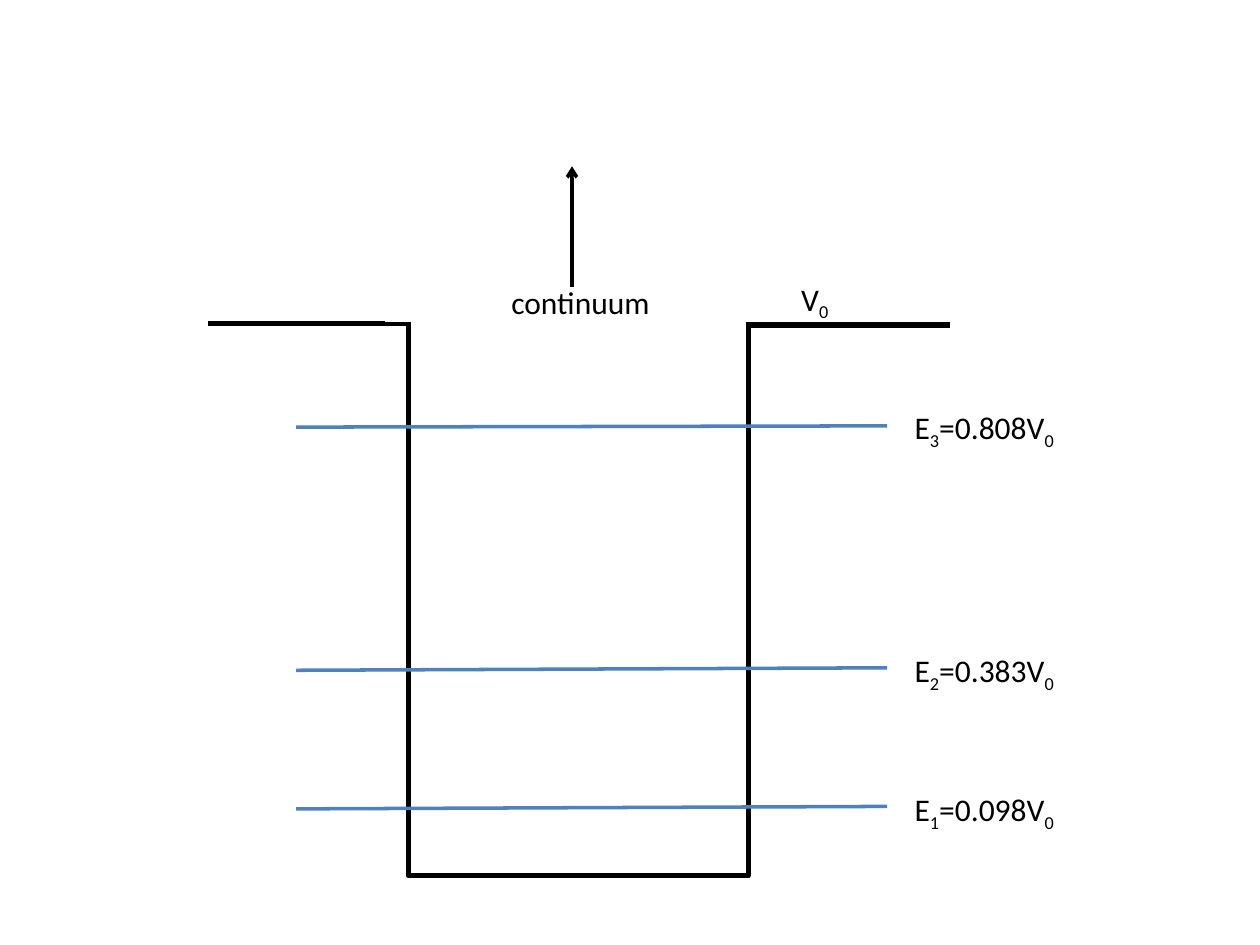
from pptx import Presentation
from pptx.dml.color import RGBColor
from pptx.enum.shapes import MSO_CONNECTOR, MSO_SHAPE
from pptx.enum.text import MSO_AUTO_SIZE
from pptx.oxml.ns import qn
from pptx.util import Inches, Pt
from lxml.etree import SubElement

BLACK, WHITE, BLUE = "000000", "FFFFFF", "4F81BD"
LEVELS = [("3", "0.808", 3.39, 3.38, 3.19),
          ("2", "0.383", 5.32, 5.30, 5.12),
          ("1", "0.098", 6.42, 6.40, 6.22)]


def color(value):
    return RGBColor.from_string(value)


class Diagram:
    text_format = {"name": "Calibri", "size": Pt(18)}

    def __init__(self, slide):
        self.slide = slide

    def outline(self, shape, line_color, width):
        shape.line.color.rgb = color(line_color)
        shape.line.width = Pt(width)

    def rectangle(self, box, line_color, width, fill=None):
        shape = self.slide.shapes.add_shape(MSO_SHAPE.RECTANGLE, *map(Inches, box))
        shape.shadow.inherit = False
        if fill:
            shape.fill.solid()
            shape.fill.fore_color.rgb = color(fill)
        else:
            shape.fill.background()
        self.outline(shape, line_color, width)

    def line(self, start, end, line_color, width, arrow=False):
        connector = self.slide.shapes.add_connector(
            MSO_CONNECTOR.STRAIGHT, *map(Inches, start + end))
        self.outline(connector, line_color, width)
        properties = connector._element.spPr
        if arrow:
            SubElement(properties.get_or_add_ln(), qn("a:tailEnd"), type="arrow")
        SubElement(properties, qn("a:effectLst"))

    def label(self, box, *parts):
        shape = self.slide.shapes.add_textbox(*map(Inches, box))
        frame = shape.text_frame
        frame.word_wrap = True
        frame.auto_size = MSO_AUTO_SIZE.SHAPE_TO_FIT_TEXT
        for index, text in enumerate(parts):
            run = frame.paragraphs[0].add_run()
            run.text = text
            for name, value in self.text_format.items():
                setattr(run.font, name, value)
            run.font.color.rgb = color(BLACK)
            if index % 2:
                run._r.get_or_add_rPr().set("baseline", "-25000")


def main():
    presentation = Presentation()
    presentation.slide_width = Inches(10)
    presentation.slide_height = Inches(7.5)
    slide = presentation.slides.add_slide(presentation.slide_layouts[6])
    diagram = Diagram(slide)

    diagram.label((6.26, 2.17, 1.55, 0.4), "V", "0")
    diagram.rectangle((3.24, 2.33, 2.7, 4.62), BLACK, 3)
    diagram.line((5.92, 2.58), (7.54, 2.58), BLACK, 3)
    diagram.line((1.65, 2.57), (3.26, 2.57), BLACK, 3)
    diagram.rectangle((3.06, 1.9, 3.01, 0.65), WHITE, 0.75, WHITE)

    for number, energy, left_y, right_y, label_top in LEVELS:
        diagram.line((2.35, left_y), (7.04, right_y), BLUE, 2)
        diagram.label((7.16, label_top, 1.71, 0.4), "E", number, f"={energy}V", "0")

    diagram.label((3.96, 2.2, 1.71, 0.4), "continuum")
    diagram.line((4.54, 2.28), (4.54, 1.32), BLACK, 2, arrow=True)
    presentation.save("out.pptx")


if __name__ == "__main__":
    main()
